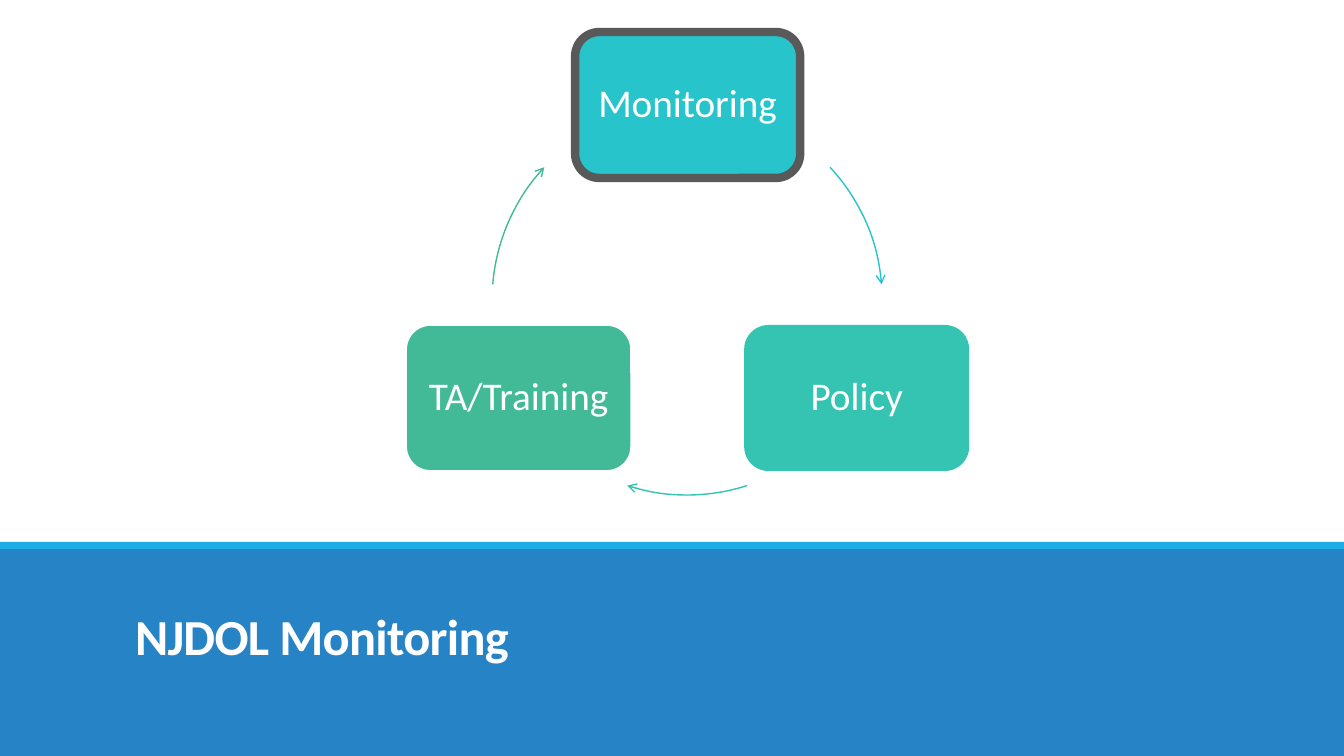
from pptx import Presentation
from pptx import util as u
from pptx.dml.color import RGBColor
from pptx.enum import shapes, text
from pptx.oxml.ns import qn
from lxml import etree

PX = u.Inches(1) / 100.8
WHITE = RGBColor(0xFF, 0xFF, 0xFF)
GRAY = RGBColor(0x59, 0x59, 0x59)
BLUE = RGBColor(0x26, 0x83, 0xC6)
SKY = RGBColor(0x1C, 0xAD, 0xE4)
CYAN = RGBColor(0x28, 0xC4, 0xCC)
TEAL = RGBColor(0x35, 0xC3, 0xB2)
GREEN = RGBColor(0x42, 0xBA, 0x97)
KIND = shapes.MSO_SHAPE

prs = Presentation()
prs.slide_width, prs.slide_height = u.Inches(13.33), u.Inches(7.5)
slide = prs.slides.add_slide(prs.slide_layouts[5])


def add(kind, box, fill=None, line=None, width=1):
    shape = slide.shapes.add_shape(kind, *[round(n * PX) for n in box])
    shape.shadow.inherit = False
    if fill is None:
        shape.fill.background()
    else:
        shape.fill.solid()
        shape.fill.fore_color.rgb = fill
    if line is None:
        shape.line.fill.background()
    else:
        shape.line.color.rgb = line
        shape.line.width = u.Pt(width)
    return shape


def write(shape, words, size, bold=False, align=text.PP_ALIGN.CENTER,
          anchor=text.MSO_ANCHOR.MIDDLE, inset=(12, 12), space=0.9, track=0):
    frame = shape.text_frame
    frame.word_wrap = True
    frame.auto_size = text.MSO_AUTO_SIZE.NONE
    frame.vertical_anchor = anchor
    frame.margin_left = frame.margin_right = round(inset[0] * PX)
    frame.margin_top = frame.margin_bottom = round(inset[1] * PX)
    para = frame.paragraphs[0]
    para.alignment, para.line_spacing = align, space
    run = para.add_run()
    run.text = words
    font = run.font
    font.name, font.size, font.bold = "Calibri", u.Pt(size), bold
    font.color.rgb = WHITE
    if track:
        run._r.get_or_add_rPr().set("spc", str(track))


# Title band
add(KIND.RECTANGLE, (0, 546, 1344, 210), BLUE)
add(KIND.RECTANGLE, (0, 542, 1344, 7), SKY)
title = slide.shapes.title
title.left, title.top, title.width, title.height = [
    round(n * PX) for n in (125, 576, 1115, 90)]
write(title, "NJDOL Monitoring", 36, bold=True, align=text.PP_ALIGN.LEFT,
      anchor=text.MSO_ANCHOR.BOTTOM, inset=(10, 0), space=0.85, track=-50)
slide.shapes._spTree.append(title._element)

# Cycle: each step has a box and the arc that leads to the next one
steps = [
    ("Monitoring", 575, 32, CYAN, GRAY, 6, 317.1, 355.4),
    ("Policy", 744, 325, TEAL, None, 0, 72.1, 107.9),
    ("TA/Training", 406, 325, GREEN, WHITE, 1.25, 184.6, 222.9),
]
for name, left, top, color, edge, width, start, end in steps:
    box = add(KIND.ROUNDED_RECTANGLE, (left, top, 225, 146), color, edge, width)
    write(box, name, 28)
    arc = add(KIND.ARC, (492, 105, 390, 390), line=color)
    # Arc angles are stored in 60000ths of a degree, adjustments in 100000ths
    arc.adjustments[0], arc.adjustments[1] = start * 0.6, end * 0.6
    etree.SubElement(arc.line._get_or_add_ln(), qn("a:tailEnd"), type="arrow")

prs.save("out.pptx")
